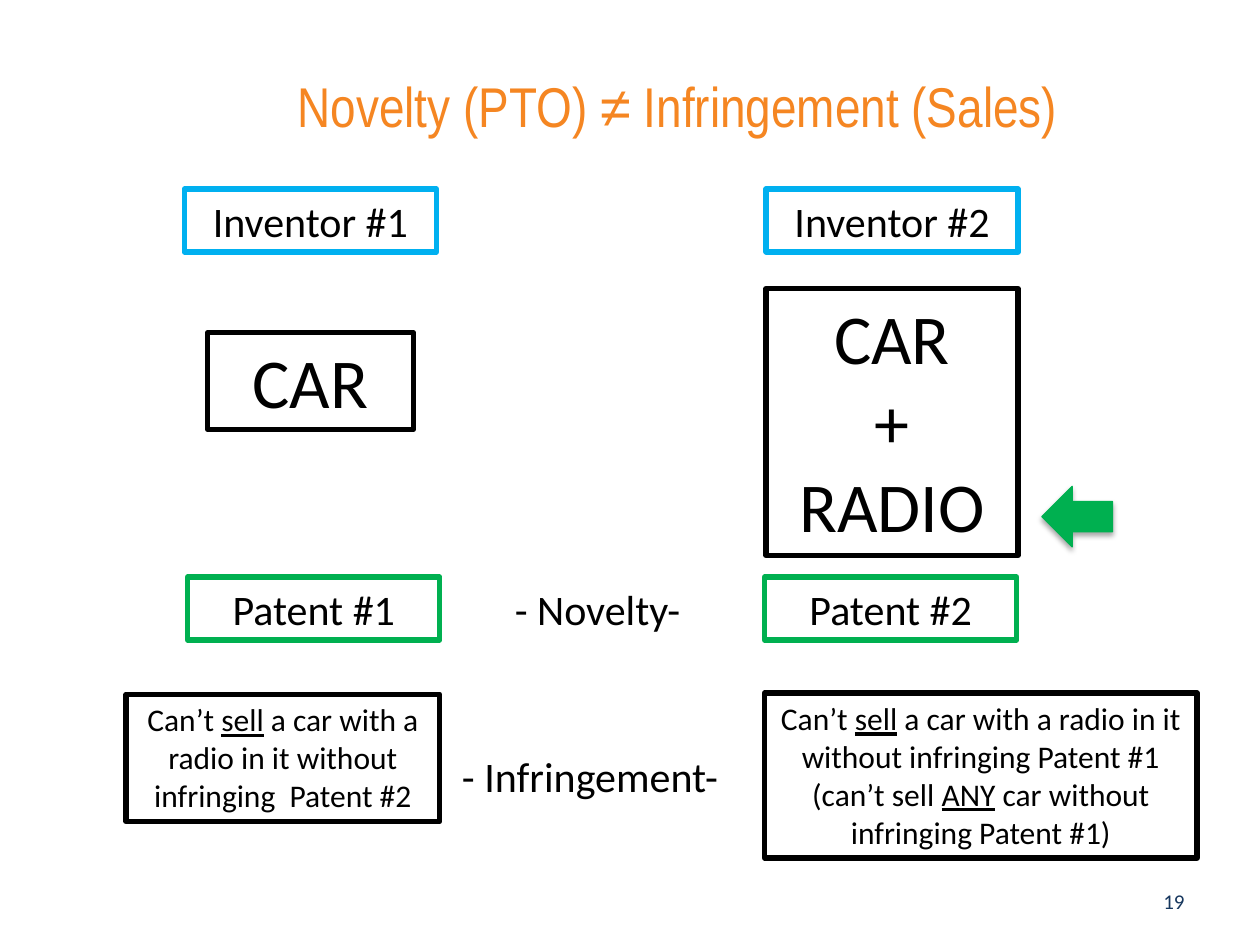
from lxml import etree
from pptx import Presentation
from pptx.dml.color import RGBColor
from pptx.enum.shapes import MSO_SHAPE
from pptx.enum.text import MSO_ANCHOR, MSO_AUTO_SIZE, PP_ALIGN
from pptx.oxml.ns import qn
from pptx.util import Pt

CENTER, RIGHT = PP_ALIGN.CENTER, PP_ALIGN.RIGHT
TOP, MIDDLE = MSO_ANCHOR.TOP, MSO_ANCHOR.MIDDLE
GROW = MSO_AUTO_SIZE.SHAPE_TO_FIT_TEXT
ARROW = MSO_SHAPE.LEFT_ARROW

THEME = {
    "head": "Arial Narrow", "body": "Calibri",
    "orange": "F58622", "navy": "17375E", "ink": "000000",
    "blue": "00B0F0", "green": "00B050",
    "title": 32, "item": 40, "label": 24, "note": 18, "page": 12,
    "line": 3,
}

TITLE = "Novelty (PTO) ≠ Infringement (Sales)"
PAGE = "19"
# Underscores enclose underlined words.
BOXES = [
    (["CAR"], "item", "ink", (118.8, 190, 117.4, 55.4)),
    (["CAR", "+", "RADIO"], "item", "ink", (437.8, 164.9, 144, 152.6)),
    (["Inventor #1"], "label", "blue", (105.4, 108, 144, 36)),
    (["Inventor #2"], "label", "blue", (437.8, 108, 144, 36)),
    (["Patent #1"], "label", "green", (107.3, 329.8, 144, 36)),
    (["Patent #2"], "label", "green", (437, 329.8, 144, 36)),
    (["Can’t _sell_ a car with a radio in it without infringing  Patent #2"],
     "note", "ink", (72, 396.7, 179.3, 72.7)),
    (["Can’t _sell_ a car with a radio in it without infringing Patent #1 "
      "(can’t sell _ANY_ car without infringing Patent #1)"],
     "note", "ink", (437, 396, 247, 94.3)),
    (["- Novelty- "], "label", None, (272.2, 329.8, 144, 36)),
    (["- Infringement- "], "label", None, (249.1, 425.5, 181.4, 36)),
]


def rgb(name):
    return RGBColor.from_string(THEME[name])


def style(para, size, color="ink", face="body", align=CENTER):
    para.alignment = align
    font = para.font
    font.name, font.size = THEME[face], Pt(THEME[size])
    font.color.rgb = rgb(color)


def write(para, text):
    for i, part in enumerate(text.split("_")):
        run = para.add_run()
        run.text = part
        if i % 2:
            run.font.underline = True


def add_box(slide, lines, size, edge, place):
    box = slide.shapes.add_textbox(*map(Pt, place))
    if edge:
        box.line.color.rgb = rgb(edge)
        box.line.width = Pt(THEME["line"])
    frame = box.text_frame
    frame.word_wrap, frame.auto_size = True, GROW
    frame.vertical_anchor = TOP
    for i, text in enumerate(lines):
        para = frame.add_paragraph() if i else frame.paragraphs[0]
        write(para, text)
        style(para, size)


def add_title(slide):
    title = slide.shapes.title
    title.left, title.top, title.width, title.height = map(
        Pt, (72, 24, 630.7, 72))
    title.text_frame.text = TITLE
    title.text_frame.vertical_anchor = MIDDLE
    style(title.text_frame.paragraphs[0], "title", "orange", "head")


def add_page(slide):
    box = slide.shapes.add_textbox(*map(Pt, (516, 500.4, 168, 28.8)))
    frame = box.text_frame
    frame.word_wrap, frame.vertical_anchor = True, MIDDLE
    frame.text = PAGE
    style(frame.paragraphs[0], "page", "navy", align=RIGHT)


def add_arrow(slide):
    arrow = slide.shapes.add_shape(ARROW, *map(Pt, (595.4, 277.9, 40.3, 34.6)))
    arrow.fill.solid()
    arrow.fill.fore_color.rgb = rgb("green")
    arrow.line.color.rgb = rgb("green")
    arrow.line.width = Pt(0.75)
    arrow.shadow.inherit = False
    effects = arrow.element.spPr.find(qn("a:effectLst"))
    shade = etree.SubElement(
        effects, qn("a:outerShdw"), blurRad=str(Pt(3.1)), dist=str(Pt(1.8)),
        dir=str(90 * 60000), rotWithShape="0")
    tint = etree.SubElement(shade, qn("a:srgbClr"), val=THEME["ink"])
    etree.SubElement(tint, qn("a:alpha"), val="35000")


def main():
    deck = Presentation()
    deck.slide_width, deck.slide_height = Pt(720), Pt(540)
    slide = deck.slides.add_slide(deck.slide_layouts[5])
    add_title(slide)
    add_page(slide)
    for box in BOXES:
        add_box(slide, *box)
    add_arrow(slide)
    deck.save("out.pptx")


if __name__ == "__main__":
    main()
